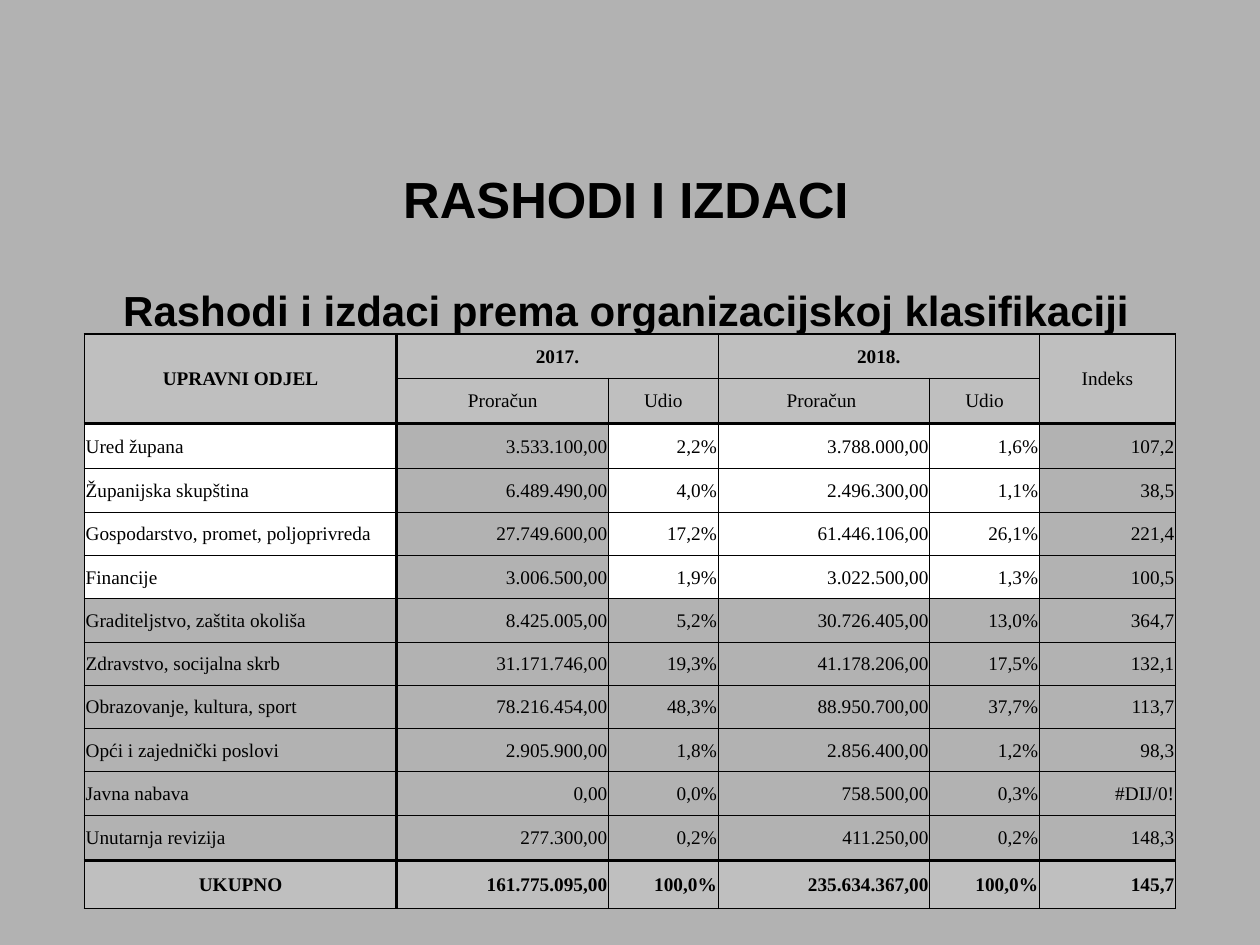
from copy import deepcopy

from lxml.etree import SubElement
from pptx import Presentation
from pptx.dml.color import RGBColor
from pptx.enum.text import MSO_ANCHOR as Anchor, MSO_AUTO_SIZE as AutoSize, PP_ALIGN as Align
from pptx.oxml.ns import qn
from pptx.util import Inches, Pt

BLACK, WHITE, GREY, HEADER = "000000", "FFFFFF", "B2B2B2", "BFBFBF"
COLUMN_WIDTHS = [2.48, 1.68, 0.87, 1.68, 0.87, 1.08]
ROW_HEIGHTS = [0.35, 0.36, 0.36] + [2.75 / 8] * 8 + [0.36, 0.38]
MERGES = [(0, 0, 1, 0), (0, 1, 0, 2), (0, 3, 0, 4), (0, 5, 1, 5)]
ROWS = [
    ["UPRAVNI ODJEL", "2017.", "", "2018.", "", "Indeks"],
    ["", "Proračun", "Udio", "Proračun ", "Udio", ""],
    ["Ured župana", "3.533.100,00", "2,2%", "3.788.000,00", "1,6%", "107,2"],
    ["Županijska skupština", "6.489.490,00", "4,0%", "2.496.300,00", "1,1%", "38,5"],
    ["Gospodarstvo, promet, poljoprivreda", "27.749.600,00", "17,2%", "61.446.106,00", "26,1%", "221,4"],
    ["Financije", "3.006.500,00", "1,9%", "3.022.500,00", "1,3%", "100,5"],
    ["Graditeljstvo, zaštita okoliša", "8.425.005,00", "5,2%", "30.726.405,00", "13,0%", "364,7"],
    ["Zdravstvo, socijalna skrb", "31.171.746,00", "19,3%", "41.178.206,00", "17,5%", "132,1"],
    ["Obrazovanje, kultura, sport", "78.216.454,00", "48,3%", "88.950.700,00", "37,7%", "113,7"],
    ["Opći i zajednički poslovi", "2.905.900,00", "1,8%", "2.856.400,00", "1,2%", "98,3"],
    ["Javna nabava", "0,00", "0,0%", "758.500,00", "0,3%", "#DIJ/0!"],
    ["Unutarnja revizija", "277.300,00", "0,2%", "411.250,00", "0,2%", "148,3"],
    ["UKUPNO", "161.775.095,00", "100,0%", "235.634.367,00", "100,0%", "145,7"],
]
TOTAL = len(ROWS) - 1
VERTICAL_LINES = {0: 1, 1: 2, 6: 1}
HORIZONTAL_LINES = {0: 1, 2: 2, TOTAL: 2, TOTAL + 1: 1}


def rgb(color):
    """Turn a hex string into a colour."""
    return RGBColor.from_string(color)


def style(r, font, size, bold):
    """Format a run."""
    r.font.name, r.font.size, r.font.bold = font, Pt(size), bold
    r.font.color.rgb = rgb(BLACK)


def add_title(s):
    """Fill the title with a heading, a blank line and a subheading."""
    sp = s.shapes.title
    sp.left, sp.top, sp.width, sp.height = map(Inches, (0.47, 1.23, 9, 0.45))
    tf = sp.text_frame
    tf.word_wrap, tf.auto_size, tf.vertical_anchor = True, AutoSize.NONE, Anchor.TOP
    tf.margin_top = Inches(0.1)
    tf.text = "RASHODI I IZDACI\v\vRashodi i izdaci prema organizacijskoj klasifikaciji"
    p = tf.paragraphs[0]
    p.alignment = Align.CENTER
    for r, size in zip(p.runs, (29, 24)):
        style(r, "Arial", size, True)
    for br in p._p.findall(qn("a:br")):
        props = deepcopy(p.runs[0]._r.rPr)
        props.set("sz", "2650")
        br.insert(0, props)


def set_borders(cell, row, col):
    """Draw the four borders by their place in the grid."""
    bottom, right = row + cell.span_height, col + cell.span_width
    if cell.is_spanned:
        bottom, right = row + 1, col + 1
    sides = [("L", VERTICAL_LINES, col), ("R", VERTICAL_LINES, right),
             ("T", HORIZONTAL_LINES, row), ("B", HORIZONTAL_LINES, bottom)]
    props = cell._tc.get_or_add_tcPr()
    for i, (side, lines, place) in enumerate(sides):
        ln = props.makeelement(qn(f"a:ln{side}"), w=str(Pt(lines.get(place, 0.5))))
        SubElement(SubElement(ln, qn("a:solidFill")), qn("a:srgbClr"), val=BLACK)
        props.insert(i, ln)


def set_fill(cell, row, col):
    """Fill header, total and the first four departments."""
    if row < 2 or row == TOTAL:
        color = HEADER
    elif row < 6 and col not in (1, 5):
        color = WHITE
    else:
        cell.fill.background()
        return
    cell.fill.solid()
    cell.fill.fore_color.rgb = rgb(color)


def fill_cell(cell, row, col, text):
    """Write and format one cell."""
    cell.margin_left = cell.margin_right = cell.margin_top = Inches(0.01)
    cell.margin_bottom = 0
    cell.vertical_anchor = Anchor.MIDDLE
    set_fill(cell, row, col)
    set_borders(cell, row, col)
    if not text:
        return
    cell.text_frame.text = text
    p = cell.text_frame.paragraphs[0]
    if row < 2 or (row == TOTAL and col == 0):
        p.alignment = Align.CENTER
    else:
        p.alignment = Align.RIGHT if col else Align.LEFT
    style(p.runs[0], "Times New Roman", 11, row == TOTAL or (row == 0 and col < 5))


def add_budget_table(s):
    """Add the table of spending by department."""
    frame = s.shapes.add_table(len(ROWS), len(COLUMN_WIDTHS), Inches(0.67), Inches(2.65),
                               Inches(sum(COLUMN_WIDTHS)), Inches(sum(ROW_HEIGHTS)))
    table = frame.table
    table.first_row = table.horz_banding = False
    for column, width in zip(table.columns, COLUMN_WIDTHS):
        column.width = Inches(width)
    for row, height in zip(table.rows, ROW_HEIGHTS):
        row.height = Inches(height)
    for top, left, bottom, right in MERGES:
        table.cell(top, left).merge(table.cell(bottom, right))
    for row, texts in enumerate(ROWS):
        for col, text in enumerate(texts):
            fill_cell(table.cell(row, col), row, col, text)


def main():
    """Build and save the slide."""
    prs = Presentation()
    prs.slide_width, prs.slide_height = Inches(10), Inches(7.5)
    s = prs.slides.add_slide(prs.slide_layouts[5])
    s.background.fill.solid()
    s.background.fill.fore_color.rgb = rgb(GREY)
    add_title(s)
    add_budget_table(s)
    prs.save("out.pptx")


if __name__ == "__main__":
    main()
